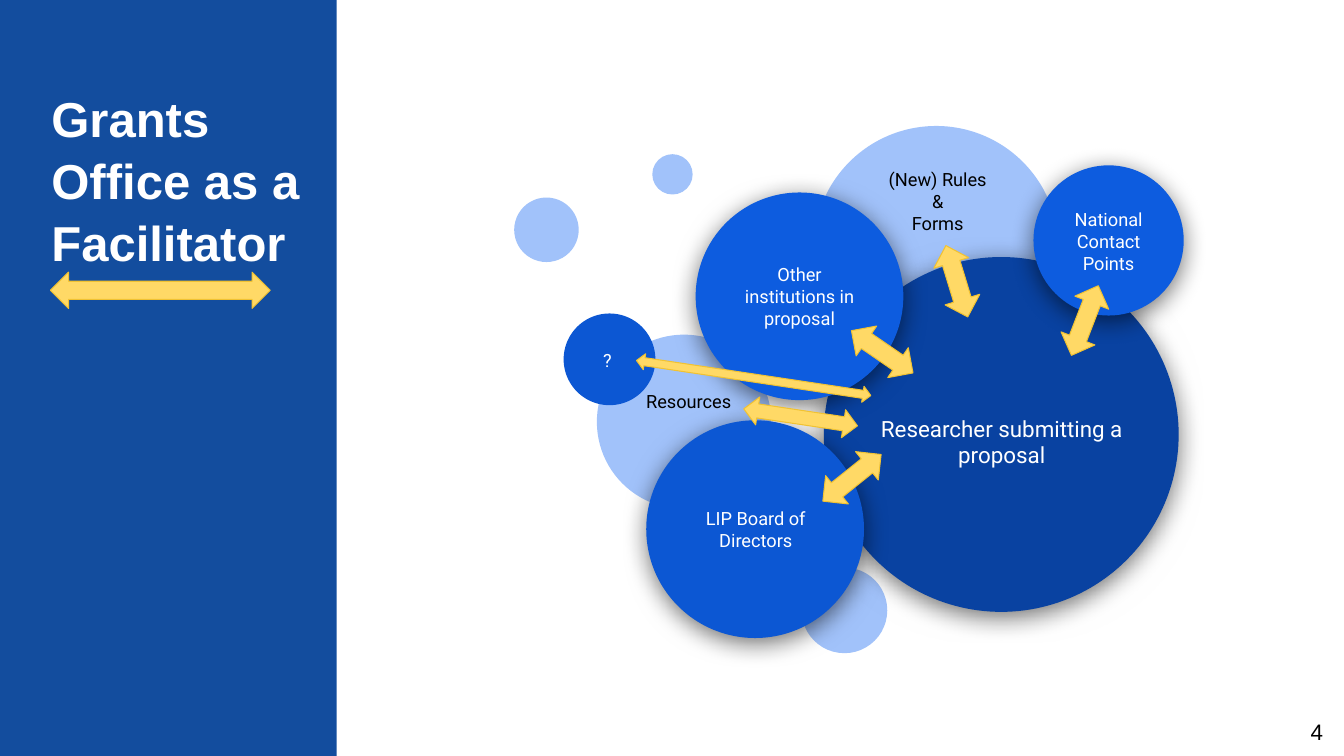
from lxml import etree
from pptx import Presentation
from pptx.dml.color import RGBColor
from pptx.enum.shapes import MSO_SHAPE
from pptx.enum.text import MSO_ANCHOR, MSO_AUTO_SIZE, PP_ALIGN
from pptx.oxml.ns import qn
from pptx.util import Inches, Pt

RECT, OVAL = MSO_SHAPE.RECTANGLE, MSO_SHAPE.OVAL
ARROW = MSO_SHAPE.LEFT_RIGHT_ARROW
TOP, MIDDLE = MSO_ANCHOR.TOP, MSO_ANCHOR.MIDDLE
LEFT, CENTER, RIGHT = PP_ALIGN.LEFT, PP_ALIGN.CENTER, PP_ALIGN.RIGHT

# Grid: square cells, 133.3 columns by 75 rows
COLS, ROWS = 133.3, 75
CELL = 0.1

PALE, BRIGHT, MID, DEEP = "A1C2FA", "0D5CDF", "0C57D3", "0942A1"
PANEL, GOLD, GOLD_EDGE = "134D9E", "FFD966", "F1C232"
WHITE, BLACK = "FFFFFF", "000000"

# Circles: centre column, centre row, diameter, colour, shadow
CIRCLES = [
    (83.75, 60.55, 8.5, PALE, False),
    (54.2, 22.8, 6.4, PALE, False),
    (67.85, 41.85, 17.3, PALE, False),
    (92.85, 24.65, 24.3, PALE, False),
    (60.45, 35.65, 9.1, MID, False),
    (66.7, 17.3, 4, PALE, False),
    (99.3, 43.1, 35.2, DEEP, True),
    (79.3, 29.4, 20.6, BRIGHT, True),
    (74.9, 52.5, 21.6, MID, True),
    (109.95, 23.85, 14.9, BRIGHT, True),
]

# Labels: text, centre column, centre row, width, height, size, colour
LABELS = [
    ("Researcher submitting a proposal", 99.35, 43.8, 26.9, 16.8, 16, WHITE),
    ("Other institutions in proposal", 79.3, 29.4, 14, 13.6, 13, WHITE),
    ("LIP Board of Directors", 74.95, 52.5, 15.5, 13.6, 13, WHITE),
    ("National Contact Points", 109.95, 23.95, 10.1, 9.9, 13, WHITE),
    ("(New) Rules\n&\nForms", 93, 20, 14, 13.6, 13, BLACK),
    ("Resources", 68.3, 39.8, 14, 13.6, 13, BLACK),
    ("?", 60.25, 35.7, 15.5, 13.6, 13, WHITE),
]

# Arrows: centre column, centre row, length, thickness, rotation
ARROWS = [
    (87.5, 34.9, 7.4, 3.6, 214.5),
    (94.9, 27.9, 7.4, 3.6, 253),
    (107.6, 31.8, 7.4, 3.6, 291.1),
    (84.5, 47.4, 7.4, 3.6, 141.3),
    (79.4, 41.4, 11.4, 2.8, 188.5),
    (74.75, 37.5, 23.5, 1.6, 188.5),
    (15.9, 28.8, 21.8, 3.6, 180),
]


def cells(n):
    return Inches(n * CELL)


def color(hex_code):
    return RGBColor.from_string(hex_code)


def centred(x, y, w, h):
    """Left, top, width and height of a box around a centre point."""
    return [cells(n) for n in (x - w / 2, y - h / 2, w, h)]


def write(sp, text, size=13, font="Roboto", fill=WHITE, bold=False,
          align=CENTER, anchor=MIDDLE, spacing=None, inset=1.3):
    tf = sp.text_frame
    tf.word_wrap = True
    tf.auto_size = MSO_AUTO_SIZE.NONE
    tf.vertical_anchor = anchor
    tf.margin_left = tf.margin_right = cells(inset)
    tf.margin_top = tf.margin_bottom = cells(inset)
    tf.text = text
    for p in tf.paragraphs:
        p.alignment = align
        p.line_spacing = spacing
        for r in p.runs:
            r.font.size, r.font.name, r.font.bold = Pt(size), font, bold
            r.font.color.rgb = color(fill)


def add_figure(slide, kind, box, fill, line=None):
    sp = slide.shapes.add_shape(kind, *box)
    sp.shadow.inherit = False
    sp.fill.solid()
    sp.fill.fore_color.rgb = color(fill)
    if line:
        sp.line.color.rgb = color(line)
        sp.line.width = Pt(0.75)
    else:
        sp.line.fill.background()
    return sp


def add_shadow(sp):
    effects = sp._element.spPr.find(qn("a:effectLst"))
    outer = etree.SubElement(effects, qn("a:outerShdw"), blurRad=str(Pt(18)),
                             dist=str(Pt(4)), dir="5400000", algn="ctr",
                             rotWithShape="0")
    tone = etree.SubElement(outer, qn("a:srgbClr"), val=BLACK)
    etree.SubElement(tone, qn("a:alpha"), val="55000")


def add_circle(slide, x, y, d, fill, shadow):
    sp = add_figure(slide, OVAL, centred(x, y, d, d), fill)
    if shadow:
        add_shadow(sp)


def add_label(slide, text, x, y, w, h, size, fill):
    sp = slide.shapes.add_textbox(*centred(x, y, w, h))
    write(sp, text, size=size, fill=fill)


def add_arrow(slide, x, y, length, thickness, rotation):
    sp = add_figure(slide, ARROW, centred(x, y, length, thickness), GOLD, GOLD_EDGE)
    sp.rotation = rotation


def add_side_panel(slide):
    box = [0, 0, cells(33.4), cells(ROWS)]
    sp = add_figure(slide, RECT, box, PANEL)
    slide.shapes._spTree.insert(2, sp._element)  # behind the title


def set_title(slide, text):
    sp = slide.shapes.title
    sp.left, sp.top, sp.width, sp.height = [cells(n) for n in (3.8, 7.2, 28.3, 22.2)]
    write(sp, text, size=35, font="Arial", bold=True, align=LEFT, anchor=TOP,
          spacing=1.05)


def add_page_number(slide, number):
    sp = slide.shapes.add_textbox(*[cells(n) for n in (126, 70.4, 6.2, 4.6)])
    write(sp, number, size=16, font="Arial", fill=BLACK, align=RIGHT,
          spacing=0.93, inset=1)


def main():
    prs = Presentation()
    prs.slide_width, prs.slide_height = cells(COLS), cells(ROWS)
    slide = prs.slides.add_slide(prs.slide_layouts[5])

    # Side panel, title and page number
    add_side_panel(slide)
    set_title(slide, "Grants Office as a Facilitator")
    add_page_number(slide, "4")

    # Bubble diagram
    for circle in CIRCLES:
        add_circle(slide, *circle)
    for label in LABELS:
        add_label(slide, *label)
    for arrow in ARROWS:
        add_arrow(slide, *arrow)

    prs.save("out.pptx")


if __name__ == "__main__":
    main()
